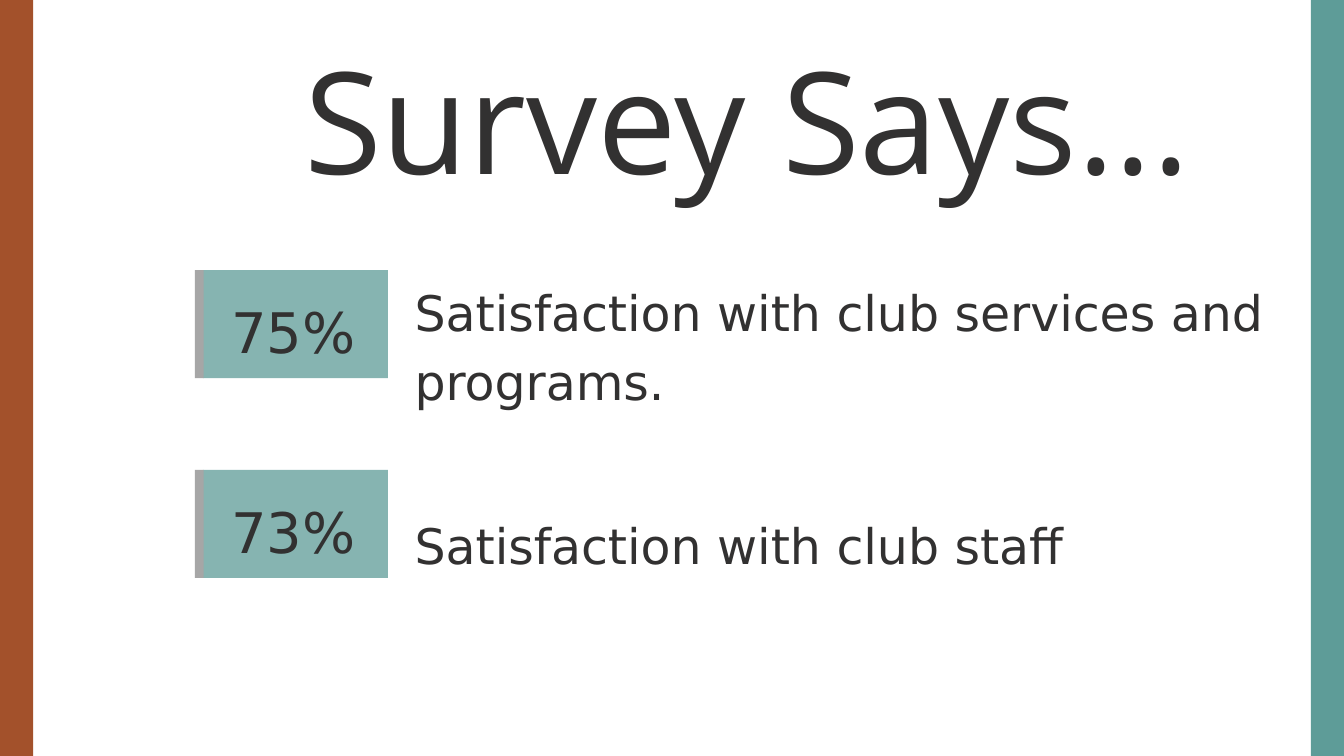
from dataclasses import dataclass
from lxml import etree
from pptx import Presentation
from pptx.dml.color import RGBColor
from pptx.enum.shapes import MSO_SHAPE
from pptx.enum.text import PP_ALIGN
from pptx.oxml.ns import qn
from pptx.util import Cm, Pt

RECTANGLE = MSO_SHAPE.RECTANGLE
LEFT, CENTER, RIGHT = PP_ALIGN.LEFT, PP_ALIGN.CENTER, PP_ALIGN.RIGHT


@dataclass(frozen=True)
class Theme:
    ink: str = "323131"
    teal: str = "5E9C98"
    rust: str = "A3512B"
    gray: str = "A6A6A6"
    title_font: str = "Open Sans"
    body_font: str = "DejaVu Sans"
    title_size: float = 151.8
    body_size: float = 52.5
    percent_size: float = 59.9


theme = Theme()
presentation = Presentation()
presentation.slide_width = Cm(50.8)
presentation.slide_height = Cm(28.58)
slide = presentation.slides.add_slide(presentation.slide_layouts[6])


def add_block(left, top, width, height, color, opacity=100):
    shape = slide.shapes.add_shape(RECTANGLE, Cm(left), Cm(top), Cm(width), Cm(height))
    shape.shadow.inherit = False
    shape.fill.solid()
    shape.fill.fore_color.rgb = RGBColor.from_string(color)
    shape.line.fill.background()
    if opacity < 100:
        color_element = shape.element.spPr.find(".//" + qn("a:srgbClr"))
        etree.SubElement(color_element, qn("a:alpha"), val=str(opacity * 1000))


def add_text(left, top, width, height, lines, font, size, align):
    text_box = slide.shapes.add_textbox(Cm(left), Cm(top), Cm(width), Cm(height))
    frame = text_box.text_frame
    frame.word_wrap = True
    frame.margin_left = frame.margin_top = frame.margin_right = frame.margin_bottom = 0
    frame.text = "\n".join(text for text, spacing, gap in lines)
    for paragraph, (text, spacing, gap) in zip(frame.paragraphs, lines):
        paragraph.alignment = align
        paragraph.line_spacing = Pt(spacing)
        paragraph.space_before = Pt(gap)
        paragraph.font.name = font
        paragraph.font.size = Pt(size)
        paragraph.font.color.rgb = RGBColor.from_string(theme.ink)


add_text(7.21, 0.18, 37.82, 7.42, [("Survey Says...", 212.6, 0)],
         theme.title_font, theme.title_size, RIGHT)

findings = [
    ("Satisfaction with club services and programs.", 74.6, 0),
    ("Satisfaction with club staff", 100.4, 74.6),
]
add_text(15.67, 10.26, 35.13, 14.33, findings, theme.body_font, theme.body_size, LEFT)

card_top, card_height, card_pitch = 10.21, 4.09, 7.55
for row, percent in enumerate(["75%", "73%"]):
    top = card_top + row * card_pitch
    add_block(7.67, top, 6.99, card_height, theme.teal, 75)
    add_block(7.37, top, 0.33, card_height, theme.gray)
    add_text(6.93, top + 0.61, 8.31, 2.72, [(percent, 83.9, 0)],
             theme.body_font, theme.percent_size, CENTER)

for left, color in [(0, theme.rust), (49.55, theme.teal)]:
    add_block(left, 0, 1.25, 28.58, color)

presentation.save("out.pptx")
